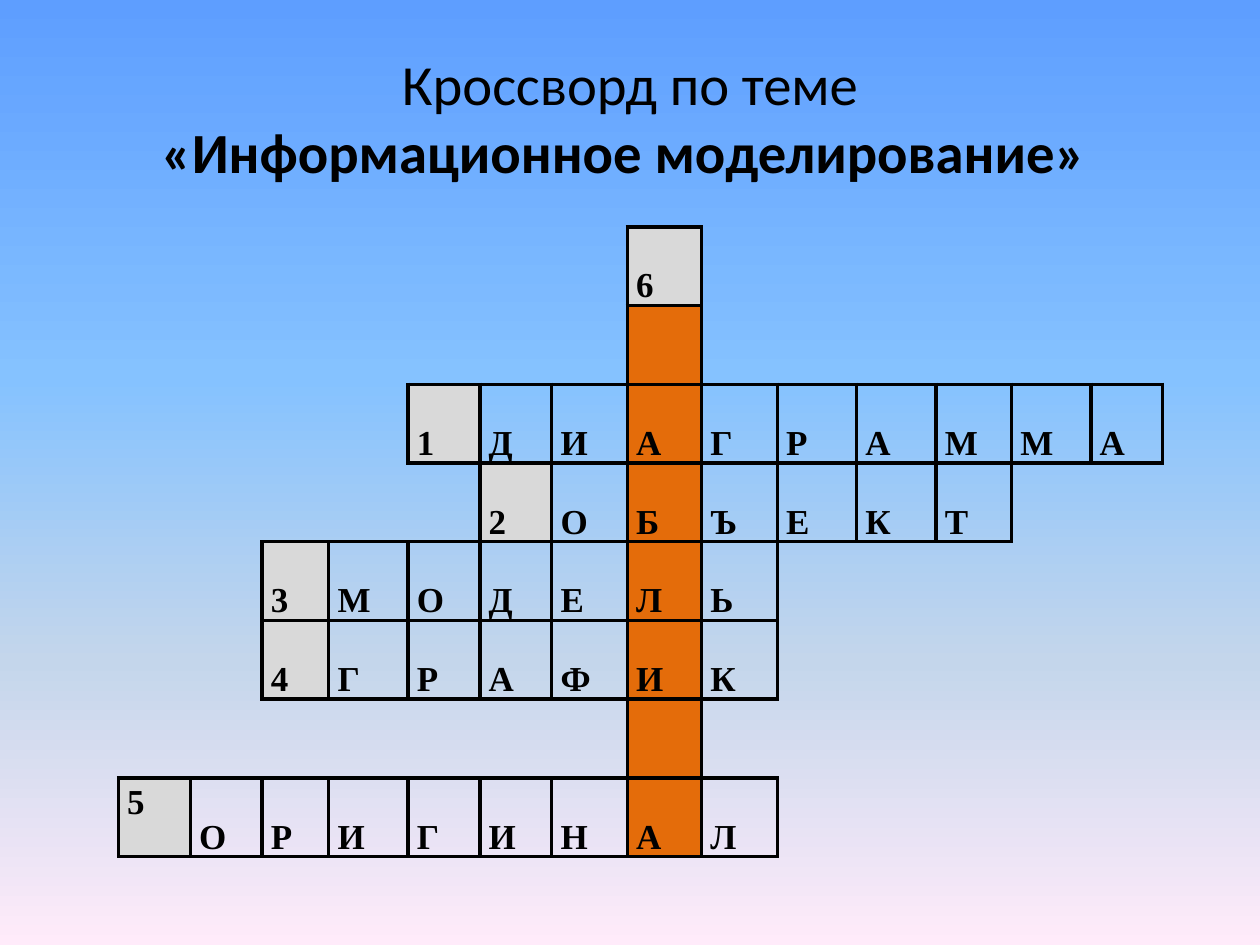
import dataclasses

import pptx
import pptx.dml.color
import pptx.enum.text
import pptx.oxml
import pptx.oxml.ns
import pptx.util
from pptx.util import Inches


@dataclasses.dataclass(frozen=True)
class Theme:
    sky: tuple = ((0, "5E9EFF"), (40, "85C2FF"), (70, "C4D6EB"), (100, "FFEBFA"))
    ink: str = "000000"
    number_fill: str = "D9D9D9"
    keyword_fill: str = "E46C0A"
    title_font: str = "Calibri"
    letter_font: str = "Times New Roman"
    title_size: float = 32.4
    letter_size: float = 20
    border_width: float = 2.25


@dataclasses.dataclass(frozen=True)
class Answer:
    number: str
    row: int
    column: int
    letters: str


THEME = Theme()
COLUMN_WIDTHS = (0.57, 0.57, 0.53, 0.63, 0.57, 0.57, 0.6,
                 0.59, 0.6, 0.63, 0.63, 0.6, 0.63, 0.57)
ROW_COUNT = 8
ROW_HEIGHT = 0.625
KEYWORD_COLUMN = 7
KEYWORD_NUMBER = "6"
ANSWERS = (
    Answer("1", 2, 4, "ДИАГРАММА"),
    Answer("2", 3, 5, "ОБЪЕКТ"),
    Answer("3", 4, 2, "МОДЕЛЬ"),
    Answer("4", 5, 2, "ГРАФИК"),
    Answer("5", 7, 0, "ОРИГИНАЛ"),
)
NEIGHBOURS = {"L": (0, -1), "R": (0, 1), "T": (-1, 0), "B": (1, 0)}


def rgb(colour: str) -> pptx.dml.color.RGBColor:
    return pptx.dml.color.RGBColor.from_string(colour)


def paint_background(slide) -> None:
    fill = slide.background.fill
    fill.gradient()
    fill.gradient_angle = 270
    stops = slide.element.find(".//" + pptx.oxml.ns.qn("a:gsLst"))
    for stop in list(stops):
        stops.remove(stop)
    for percent, colour in THEME.sky:
        stops.append(pptx.oxml.parse_xml(
            f'<a:gs {pptx.oxml.ns.nsdecls("a")} pos="{percent * 1000}">'
            f'<a:srgbClr val="{colour}"/></a:gs>'))


def write_title(slide) -> None:
    title = slide.shapes.title
    title.left, title.top = Inches(0.5), Inches(0.3)
    title.width, title.height = Inches(9), Inches(1.25)
    frame = title.text_frame
    frame.word_wrap = True
    frame.vertical_anchor = pptx.enum.text.MSO_ANCHOR.MIDDLE
    heading = frame.paragraphs[0]
    heading.alignment = pptx.enum.text.PP_ALIGN.CENTER
    heading.font.name = THEME.title_font
    heading.font.size = pptx.util.Pt(THEME.title_size)
    heading.font.color.rgb = rgb(THEME.ink)
    heading.add_run().text = "Кроссворд по теме"
    heading.add_line_break()
    topic = heading.add_run()
    topic.text = "«Информационное моделирование» "
    topic.font.bold = True


def lay_out_letters() -> dict[tuple[int, int], str]:
    letters = {(row, KEYWORD_COLUMN): "" for row in range(ROW_COUNT)}
    letters[0, KEYWORD_COLUMN] = KEYWORD_NUMBER
    for answer in ANSWERS:
        for offset, letter in enumerate(answer.number + answer.letters):
            letters[answer.row, answer.column + offset] = letter
    return letters


def draw_border(cell, side: str, visible: bool) -> None:
    paint = (f'<a:solidFill><a:srgbClr val="{THEME.ink}"/></a:solidFill>'
             if visible else "<a:noFill/>")
    cell._tc.get_or_add_tcPr().append(pptx.oxml.parse_xml(
        f'<a:ln{side} {pptx.oxml.ns.nsdecls("a")} '
        f'w="{pptx.util.Pt(THEME.border_width)}">{paint}</a:ln{side}>'))


def fill_cell(cell, colour: str | None) -> None:
    if colour is None:
        cell.fill.background()
    else:
        cell.fill.solid()
        cell.fill.fore_color.rgb = rgb(colour)


def write_letter(cell, letter: str) -> None:
    cell.margin_left = cell.margin_right = Inches(0.07)
    cell.margin_top = cell.margin_bottom = 0
    cell.vertical_anchor = (pptx.enum.text.MSO_ANCHOR.TOP if letter == "5"
                            else pptx.enum.text.MSO_ANCHOR.BOTTOM)
    paragraph = cell.text_frame.paragraphs[0]
    paragraph.text = letter
    paragraph.line_spacing = 1.15
    paragraph.font.name = THEME.letter_font
    paragraph.font.size = pptx.util.Pt(THEME.letter_size)
    paragraph.font.bold = True
    paragraph.font.color.rgb = rgb(THEME.ink)


def draw_crossword(slide) -> None:
    crossword = slide.shapes.add_table(
        ROW_COUNT, len(COLUMN_WIDTHS), Inches(0.94), Inches(1.8),
        Inches(sum(COLUMN_WIDTHS)), Inches(ROW_COUNT * ROW_HEIGHT)).table
    crossword.first_row = crossword.horz_banding = False
    for column, width in zip(crossword.columns, COLUMN_WIDTHS):
        column.width = Inches(width)
    letters = lay_out_letters()
    for row in range(ROW_COUNT):
        crossword.rows[row].height = Inches(ROW_HEIGHT)
        for column in range(len(COLUMN_WIDTHS)):
            cell = crossword.cell(row, column)
            place = (row, column)
            for side, (down, across) in NEIGHBOURS.items():
                neighbour = (row + down, column + across)
                draw_border(cell, side, place in letters or neighbour in letters)
            letter = letters.get(place, "")
            if letter.isdigit():
                fill_cell(cell, THEME.number_fill)
            elif column == KEYWORD_COLUMN:
                fill_cell(cell, THEME.keyword_fill)
            else:
                fill_cell(cell, None)
            if letter:
                write_letter(cell, letter)


def main() -> None:
    presentation = pptx.Presentation()
    presentation.slide_width = Inches(10)
    presentation.slide_height = Inches(7.5)
    slide = presentation.slides.add_slide(presentation.slide_layouts[5])
    paint_background(slide)
    write_title(slide)
    draw_crossword(slide)
    presentation.save("out.pptx")


if __name__ == "__main__":
    main()
